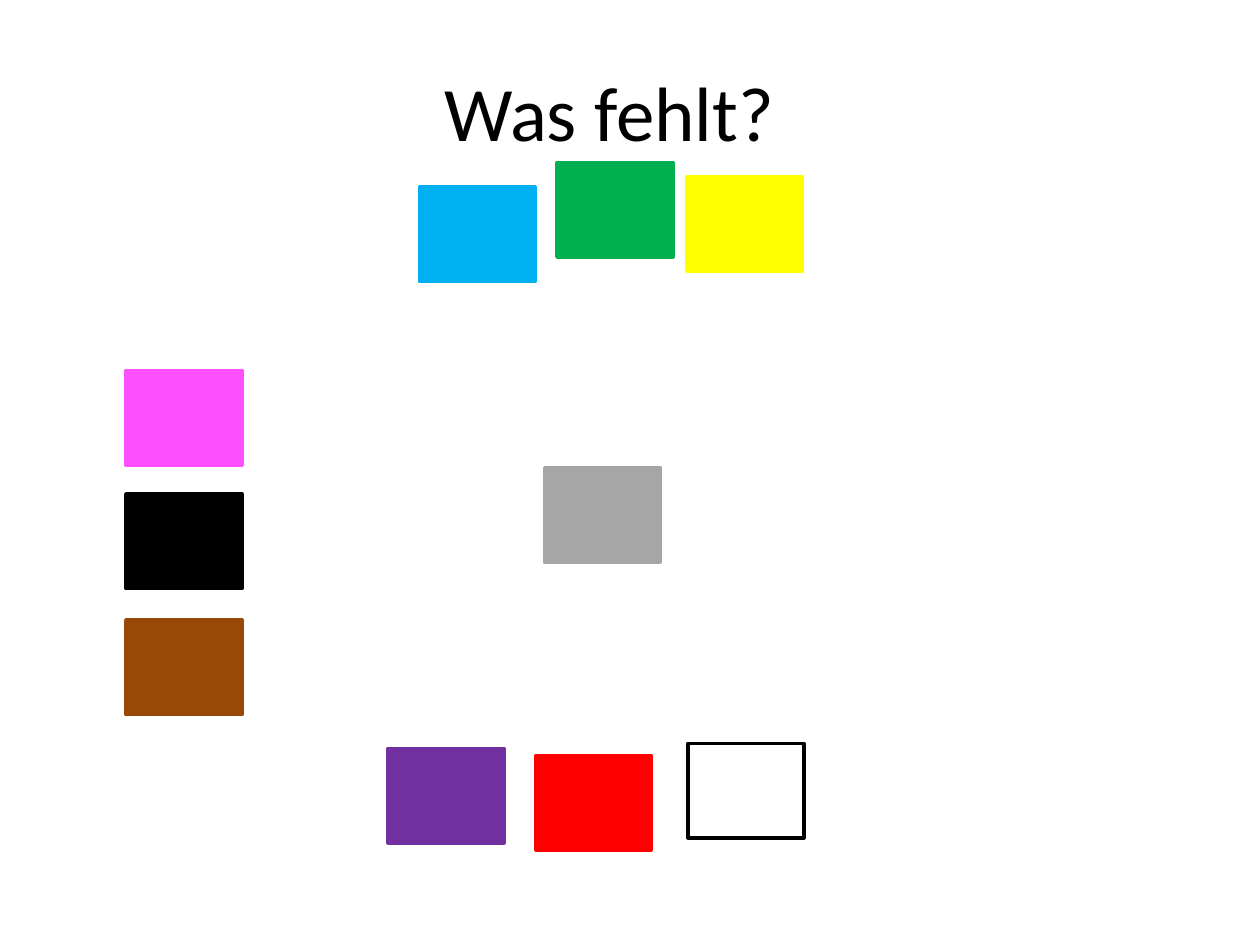
from pptx import Presentation
from pptx.dml.color import RGBColor
from pptx.enum.shapes import MSO_SHAPE as Shape
from pptx.enum.text import MSO_ANCHOR as Anchor, PP_ALIGN as Align
from pptx.util import Inches, Pt

COLORS = {
    "blue": "00B0F0",
    "green": "00B050",
    "red": "FF0000",
    "purple": "7030A0",
    "brown": "984807",
    "white": "FFFFFF",
    "pink": "FD4FFD",
    "black": "000000",
    "gray": "A6A6A6",
    "yellow": "FFFF00",
}
TITLE = "Was fehlt?"
CARD_SIZE = (0.92, 0.75)
CARDS = [
    ("blue", 3.33, 1.48),
    ("green", 4.42, 1.29),
    ("red", 4.25, 6),
    ("purple", 3.08, 5.94),
    ("brown", 1, 4.92),
    ("white", 5.46, 5.9),
    ("pink", 1, 2.94),
    ("black", 1, 3.92),
    ("gray", 4.32, 3.71),
    ("yellow", 5.45, 1.4),
]


def color(name):
    return RGBColor.from_string(COLORS[name])


def add_title(page):
    title = page.shapes.title
    title.left, title.top = Inches(1.67), Inches(0.25)
    title.width, title.height = Inches(6.33), Inches(1.25)
    frame = title.text_frame
    frame.vertical_anchor = Anchor.MIDDLE
    para = frame.paragraphs[0]
    para.alignment = Align.CENTER
    span = para.add_run()
    span.text = TITLE
    span.font.name = "Calibri"
    span.font.size = Pt(44)
    span.font.color.rgb = color("black")


def add_card(page, name, left, top):
    width, height = CARD_SIZE
    card = page.shapes.add_shape(
        Shape.RECTANGLE, Inches(left), Inches(top), Inches(width), Inches(height)
    )
    card.shadow.inherit = False
    card.fill.solid()
    card.fill.fore_color.rgb = color(name)
    card.line.color.rgb = color("black" if name == "white" else name)
    card.line.width = Pt(2)


def main():
    deck = Presentation()
    deck.slide_width, deck.slide_height = Inches(10), Inches(7.5)
    page = deck.slides.add_slide(deck.slide_layouts[5])
    add_title(page)
    for name, left, top in CARDS:
        add_card(page, name, left, top)
    deck.save("out.pptx")


if __name__ == "__main__":
    main()
